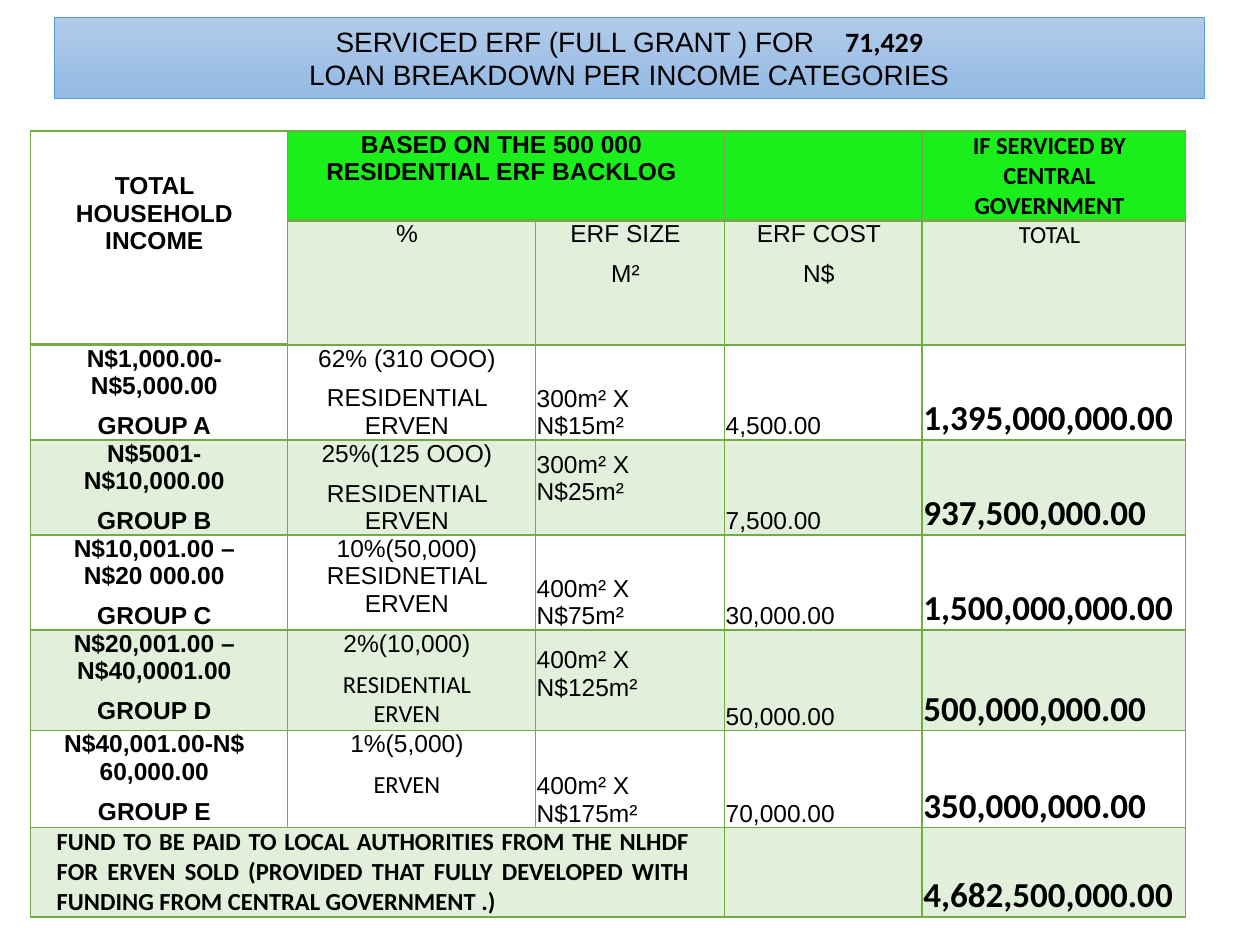
import pptx
import pptx.dml.color
import pptx.enum.text
import pptx.oxml.ns
import pptx.util
from lxml import etree

Inches, Pt = pptx.util.Inches, pptx.util.Pt
RGB = pptx.dml.color.RGBColor
ALIGN = pptx.enum.text.PP_ALIGN
ANCHOR = pptx.enum.text.MSO_ANCHOR
qn = pptx.oxml.ns.qn

BLACK = RGB(0, 0, 0)
WHITE = RGB(0xFF, 0xFF, 0xFF)
GREEN = RGB(0x70, 0xAD, 0x47)
BRIGHT = RGB(0x1B, 0xEF, 0x1B)
PALE = RGB(0xE2, 0xEF, 0xDA)
BLUE = RGB(0x5B, 0x9B, 0xD5)
BLUE_TOP = RGB(0xB1, 0xCB, 0xE9)
BLUE_BOTTOM = RGB(0x93, 0xB9, 0xE4)

# Text formats
PLAIN = dict(name="Arial", size=Pt(14), bold=False)
BOLD = dict(PLAIN, bold=True)
CALIBRI = dict(PLAIN, name="Calibri")
CALIBRI_BOLD = dict(CALIBRI, bold=True)
AMOUNT = dict(CALIBRI_BOLD, size=Pt(20))
TITLE = dict(PLAIN, size=Pt(16))
TITLE_BOLD = dict(TITLE, name="Calibri", bold=True)

# Cell formats
TOP = dict(margin_left=Inches(0.03), margin_right=Inches(0.03),
           margin_top=0, margin_bottom=0, vertical_anchor=ANCHOR.TOP)
LOW = dict(margin_left=Inches(0.01), margin_right=Inches(0.01),
           margin_top=Inches(0.01), margin_bottom=0, vertical_anchor=ANCHOR.BOTTOM)
RAISED = dict(LOW, margin_bottom=Inches(0.23))
HEADING = dict(TOP, margin_top=Inches(0.33))

COLS = [2.04, 1.97, 1.5, 1.57, 2.09]
ROWS = [0.71, 0.97, 0.75, 0.75, 0.75, 0.8, 0.77, 0.71]

# Income, group, share lines with formats, erf size, size cell format, cost, total
GROUPS = [
    ("N$1,000.00-N$5,000.00", "GROUP A",
     [("62% (310 OOO)", PLAIN), ("RESIDENTIAL ERVEN", PLAIN)],
     "300m² X N$15m²", LOW, "4,500.00", "1,395,000,000.00"),
    ("N$5001-N$10,000.00", "GROUP B",
     [("25%(125 OOO)", PLAIN), ("RESIDENTIAL ERVEN", PLAIN)],
     "300m² X N$25m²", RAISED, "7,500.00", "937,500,000.00"),
    ("N$10,001.00 – N$20 000.00", "GROUP C",
     [("10%(50,000) RESIDNETIAL ERVEN", PLAIN)],
     "400m² X N$75m²", LOW, "30,000.00", "1,500,000,000.00"),
    ("N$20,001.00 –N$40,0001.00", "GROUP D",
     [("2%(10,000)", PLAIN), ("RESIDENTIAL ERVEN", CALIBRI)],
     "400m² X N$125m²", RAISED, "50,000.00", "500,000,000.00"),
    ("N$40,001.00-N$ 60,000.00", "GROUP E",
     [("1%(5,000)", PLAIN), ("ERVEN", CALIBRI)],
     "400m² X N$175m²", LOW, "70,000.00", "350,000,000.00"),
]


def set_all(obj, values):
    for key, value in values.items():
        setattr(obj, key, value)


def add_run(p, text, fmt):
    r = p.add_run()
    r.text = text
    set_all(r.font, fmt)
    r.font.color.rgb = BLACK
    return r


def fill_cell(cell, lines, layout=TOP, align=ALIGN.CENTER):
    """Write (text, format) paragraphs; top-anchored cells are indented."""
    set_all(cell, layout)
    tf = cell.text_frame
    for i, (text, fmt) in enumerate(lines):
        p = tf.paragraphs[0] if i == 0 else tf.add_paragraph()
        p.alignment = align
        if layout["vertical_anchor"] == ANCHOR.TOP:
            p.space_before = Pt(7.1)
            pPr = p._p.get_or_add_pPr()
            pPr.set("marL", str(Inches(0.18)))
            pPr.set("marR", str(Inches(0.25)))
        add_run(p, text, fmt)


def set_borders(cell, top, bottom):
    tcPr = cell._tc.get_or_add_tcPr()
    for side, width in (("L", 1), ("R", 1), ("T", top), ("B", bottom)):
        ln = etree.SubElement(tcPr, qn("a:ln" + side), w=str(Pt(width)))
        fill = etree.SubElement(ln, qn("a:solidFill"))
        etree.SubElement(fill, qn("a:srgbClr"), val=str(GREEN))


def style_cells(table):
    for i in range(len(ROWS)):
        for j in range(len(COLS)):
            cell = table.cell(i, j)
            # The heavy rule under the header is one row lower in column one
            rule = 2 if j == 0 else 1
            set_borders(cell, 2 if i == rule else 1, 2 if i == rule - 1 else 1)
            cell.fill.solid()
            if i == 0 and j > 0:
                color = BRIGHT
            elif i % 2 and not (i == 1 and j == 0):
                color = PALE
            else:
                color = WHITE
            cell.fill.fore_color.rgb = color


def add_title(slide):
    sp = slide.shapes.title
    set_all(sp, dict(left=Inches(0.43), top=Inches(0.14),
                     width=Inches(9.13), height=Inches(0.64)))
    sp.fill.gradient()
    sp.fill.gradient_angle = 270
    for stop, color, pos in zip(sp.fill.gradient_stops, (BLUE_TOP, BLUE_BOTTOM), (0, 1)):
        stop.color.rgb = color
        stop.position = pos
    sp.line.color.rgb = BLUE
    sp.line.width = Pt(0.5)
    tf = sp.text_frame
    set_all(tf, dict(word_wrap=True, vertical_anchor=ANCHOR.MIDDLE,
                     auto_size=pptx.enum.text.MSO_AUTO_SIZE.NONE))
    p = tf.paragraphs[0]
    add_run(p, "SERVICED ERF (FULL GRANT ) FOR", TITLE)
    gap = add_run(p, " ", TITLE)
    gap.font._element.set("spc", "1300")  # widened space before the number
    add_run(p, "71,429", TITLE_BOLD)
    p2 = tf.add_paragraph()
    add_run(p2, "LOAN BREAKDOWN PER INCOME CATEGORIES", TITLE)
    for para in (p, p2):
        para.alignment = ALIGN.CENTER


def add_breakdown(slide):
    table = slide.shapes.add_table(
        len(ROWS), len(COLS), Inches(0.24), Inches(1.04),
        Inches(sum(COLS)), Inches(sum(ROWS))).table
    set_all(table, dict(first_row=False, horz_banding=False))
    for col, width in zip(table.columns, COLS):
        col.width = Inches(width)
    for row, height in zip(table.rows, ROWS):
        row.height = Inches(height)
    style_cells(table)

    # Header rows
    table.cell(0, 0).merge(table.cell(1, 0))
    table.cell(0, 1).merge(table.cell(0, 2))
    fill_cell(table.cell(0, 0), [("TOTAL HOUSEHOLD INCOME", BOLD)], HEADING)
    fill_cell(table.cell(0, 1), [("BASED ON THE 500 000 RESIDENTIAL ERF BACKLOG", BOLD)])
    fill_cell(table.cell(0, 4), [("IF SERVICED BY CENTRAL GOVERNMENT", CALIBRI_BOLD)])
    heads = [["%"], ["ERF SIZE", "M²"], ["ERF COST", "N$"]]
    for j, lines in enumerate(heads, 1):
        fill_cell(table.cell(1, j), [(text, PLAIN) for text in lines])
    fill_cell(table.cell(1, 4), [("TOTAL", CALIBRI)])

    # Income groups
    for i, (income, group, share, size, layout, cost, total) in enumerate(GROUPS, 2):
        fill_cell(table.cell(i, 0), [(income, BOLD), (group, BOLD)])
        fill_cell(table.cell(i, 1), share)
        fill_cell(table.cell(i, 2), [(size, PLAIN)], layout, ALIGN.LEFT)
        fill_cell(table.cell(i, 3), [(cost, PLAIN)], LOW, ALIGN.LEFT)
        fill_cell(table.cell(i, 4), [(total, AMOUNT)], LOW, ALIGN.LEFT)

    # Fund row
    table.cell(7, 0).merge(table.cell(7, 2))
    fund = ("FUND TO BE PAID TO LOCAL AUTHORITIES FROM THE NLHDF FOR ERVEN SOLD "
            "(PROVIDED THAT FULLY DEVELOPED WITH FUNDING FROM CENTRAL GOVERNMENT .)")
    fill_cell(table.cell(7, 0), [(fund, CALIBRI_BOLD)], TOP, ALIGN.JUSTIFY)
    fill_cell(table.cell(7, 4), [("4,682,500,000.00", AMOUNT)], LOW, ALIGN.LEFT)


def main():
    prs = pptx.Presentation()
    set_all(prs, dict(slide_width=Inches(10), slide_height=Inches(7.5)))
    slide = prs.slides.add_slide(prs.slide_layouts[5])
    add_title(slide)
    add_breakdown(slide)
    prs.save("out.pptx")


if __name__ == "__main__":
    main()
